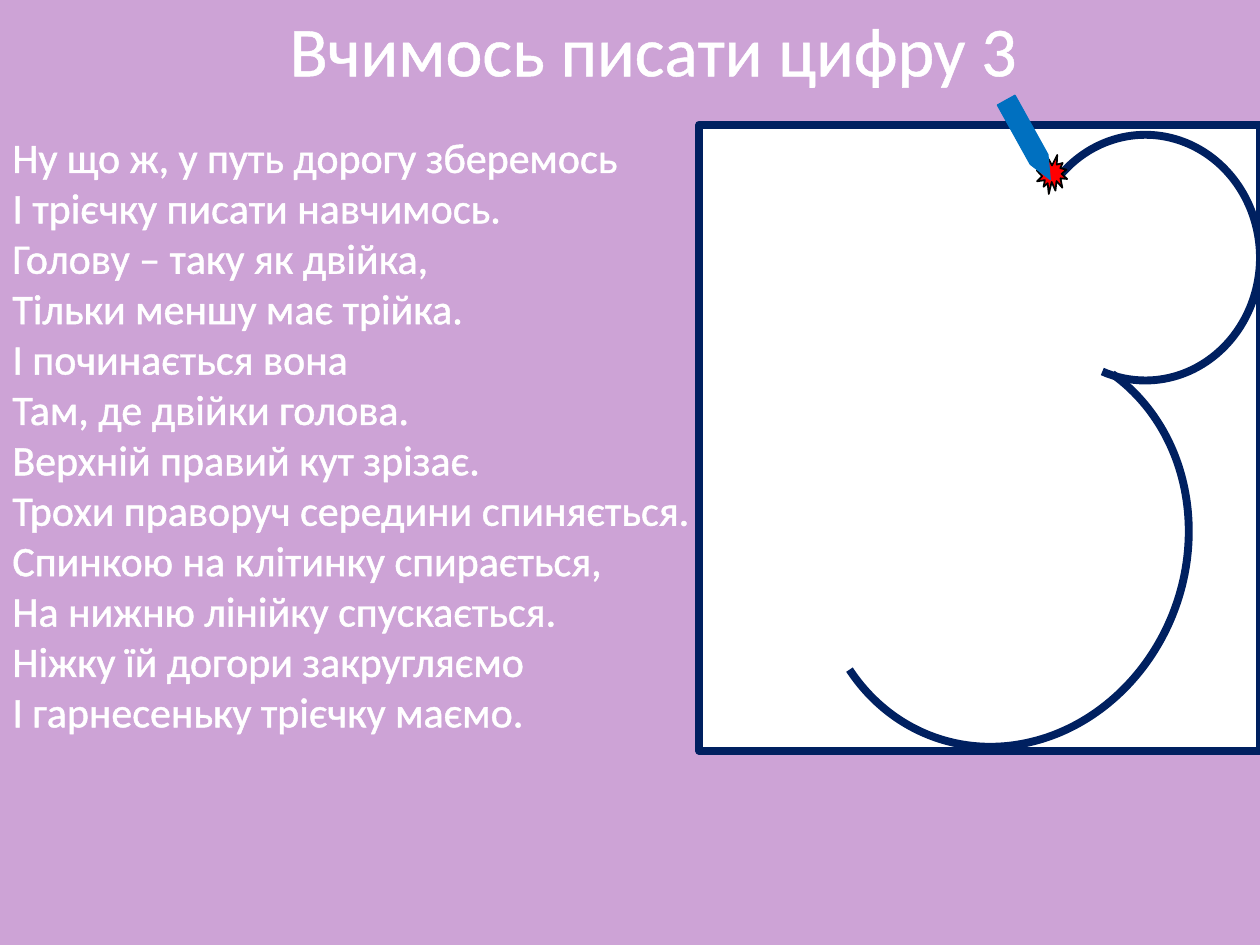
import pptx
import pptx.dml.color
import pptx.enum.shapes
import pptx.enum.text
import pptx.oxml
import pptx.oxml.ns
import pptx.util

Inches = pptx.util.Inches
Pt = pptx.util.Pt
Shapes = pptx.enum.shapes.MSO_SHAPE
Align = pptx.enum.text.PP_ALIGN

THEME = {
    "font": "Calibri", "title_size": 40, "poem_size": 24, "outline": 1.45,
    "background": "CDA3D6", "white": "FFFFFF", "navy": "002060",
    "pencil": "0070C0", "red": "FF0000", "black": "000000",
}
POEM = [
    "Ну що ж, у путь дорогу зберемось",
    "І трієчку писати навчимось.",
    "Голову – таку як двійка,",
    "Тільки меншу має трійка.",
    "І починається вона",
    "Там, де двійки голова.",
    "Верхній правий кут зрізає.",
    "Трохи праворуч середини спиняється.",
    "Спинкою на клітинку спирається,",
    "На нижню лінійку спускається.",
    "Ніжку їй догори закругляємо",
    "І гарнесеньку трієчку маємо.",
]


def color(name):
    return pptx.dml.color.RGBColor.from_string(THEME[name])


def add_figure(shapes, kind, place, fill, line, width, rotation=0):
    figure = shapes.add_shape(kind, *map(Inches, place))
    figure.shadow.inherit = False
    figure.rotation = rotation
    if fill:
        figure.fill.solid()
        figure.fill.fore_color.rgb = color(fill)
    else:
        figure.fill.background()
    figure.line.color.rgb = color(line)
    figure.line.width = Pt(width)
    return figure


def write_text(box, text, size, alignment):
    """Fill an unwrapped box with white, white-outlined text."""
    frame = box.text_frame
    frame.text = text
    frame.word_wrap = False
    frame.auto_size = pptx.enum.text.MSO_AUTO_SIZE.SHAPE_TO_FIT_TEXT
    frame.vertical_anchor = pptx.enum.text.MSO_ANCHOR.TOP
    para = frame.paragraphs[0]
    para.alignment = alignment
    for span in para.runs:
        span.font.name = THEME["font"]
        span.font.size = Pt(THEME[size])
        span.font.color.rgb = color("white")
        outline = pptx.oxml.parse_xml(
            f'<a:ln {pptx.oxml.ns.nsdecls("a")} w="{Pt(THEME["outline"])}">'
            f'<a:solidFill><a:srgbClr val="{THEME["white"]}"/></a:solidFill></a:ln>')
        span.font._element.insert(0, outline)


deck = pptx.Presentation()
deck.slide_width, deck.slide_height = Inches(10), Inches(7.5)
page = deck.slides.add_slide(deck.slide_layouts[5])
page.background.fill.solid()
page.background.fill.fore_color.rgb = color("background")

title = page.shapes.title
title.left, title.top, title.width, title.height = map(Inches, (2.17, 0, 6.03, 0.77))
write_text(title, "Вчимось писати цифру 3", "title_size", Align.CENTER)

# The digit: a square cell with two arcs, each given by its whole ellipse
digit = page.shapes.add_group_shape()
add_figure(digit.shapes, Shapes.RECTANGLE, (5.55, 0.99, 4.45, 4.97), "white", "navy", 4.5)
arcs = [  # ellipse, rotation, start and end in degrees
    ((8.18, 1.07, 1.82, 1.95), 0, 222.9, 110.7),
    ((6.34, 2.87, 3.24, 2.91), 109.6, 193, 31.3),
]
for ellipse, rotation, start, end in arcs:
    arc = add_figure(digit.shapes, Shapes.ARC, ellipse, None, "navy", 4.5, rotation)
    for index, degrees in enumerate((start, end)):
        arc.adjustments[index] = degrees * 60000 / 100000

add_figure(page.shapes, Shapes.EXPLOSION1, (8.23, 1.23, 0.24, 0.31), "red", "black", 1)
pencil = add_figure(page.shapes, Shapes.PENTAGON, (7.8, 1.03, 0.72, 0.16),
                    "pencil", "pencil", 0.75, 61)
pencil.adjustments[0] = 1.14

poem = page.shapes.add_textbox(*map(Inches, (0, 0.99, 5.7, 4.95)))
write_text(poem, "\v".join(POEM), "poem_size", Align.LEFT)

deck.save("out.pptx")
